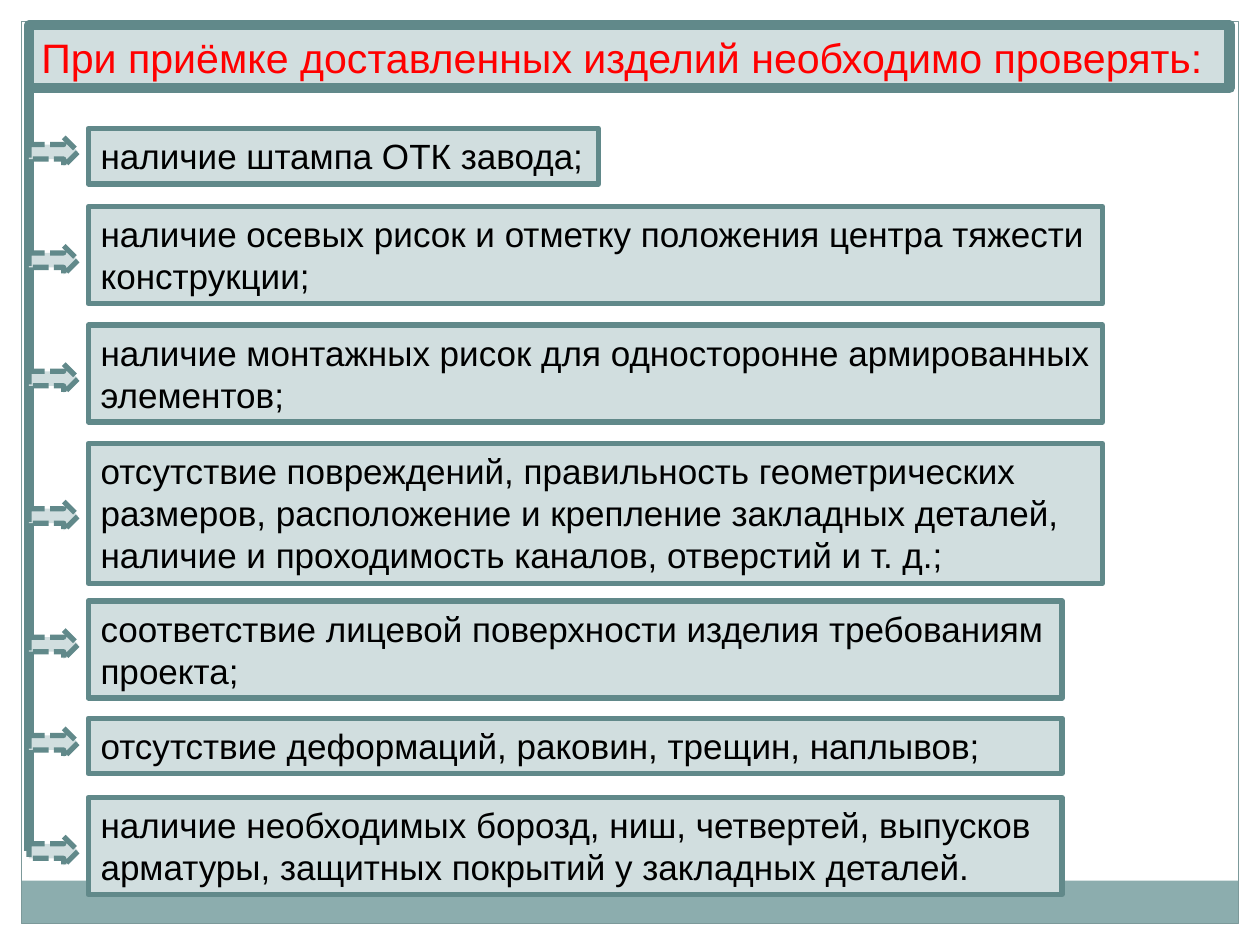
from lxml import etree
from pptx import Presentation
from pptx.dml.color import RGBColor
from pptx.enum import dml, shapes, text
from pptx.oxml import ns
from pptx.util import Inches, Pt

WHITE = RGBColor(0xFF, 0xFF, 0xFF)
BLACK = RGBColor(0, 0, 0)
RED = RGBColor(0xFF, 0, 0)
PALE = RGBColor(0xD1, 0xDE, 0xDF)
TEAL = RGBColor(0x61, 0x89, 0x8A)
BAND = RGBColor(0x8C, 0xAD, 0xAE)
FRAME = RGBColor(0x7C, 0x99, 0x9A)

RECT = shapes.MSO_SHAPE.RECTANGLE
ARROW = shapes.MSO_SHAPE.RIGHT_ARROW
RAIL_X, ARROW_W, ARROW_H = 0.23, 0.39, 0.23
ITEM_X, WIDE, MEDIUM = 0.7, 8.05, 7.73

# top, width, height, arrow top, wording
ITEMS = [
    (1.02, 4.05, 0.44, 1.09, "наличие штампа ОТК завода;"),
    (1.64, WIDE, 0.77, 1.95,
     "наличие осевых рисок и отметку положения центра тяжести конструкции;"),
    (2.58, WIDE, 0.77, 2.89,
     "наличие монтажных рисок для односторонне армированных элементов;"),
    (3.52, WIDE, 1.11, 3.98,
     "отсутствие повреждений, правильность геометрических размеров, "
     "расположение и крепление закладных деталей, наличие и проходимость "
     "каналов, отверстий и т. д.;"),
    (4.77, MEDIUM, 0.77, 5.0,
     "соответствие лицевой поверхности изделия требованиям проекта;"),
    (5.7, MEDIUM, 0.44, 5.78,
     "отсутствие деформаций, раковин, трещин, наплывов;"),
    (6.33, MEDIUM, 0.77, 6.64,
     "наличие необходимых борозд, ниш, четвертей, выпусков арматуры, "
     "защитных покрытий у закладных деталей."),
]


def add_box(s, kind, box, fill=None, line=None, width=0.75, dash=None):
    """Add a flat preset shape in the box (left, top, width, height)."""
    sp = s.shapes.add_shape(kind, *map(Inches, box))
    sp.shadow.inherit = False
    if fill is None:
        sp.fill.background()
    else:
        sp.fill.solid()
        sp.fill.fore_color.rgb = fill
    if line is None:
        sp.line.fill.background()
    else:
        sp.line.color.rgb = line
        sp.line.width = Pt(width)
        if dash is not None:
            sp.line.dash_style = dash
    return sp


def write(sp, words, size=20, color=BLACK, anchor=text.MSO_ANCHOR.TOP, wrap=True):
    """Write left-aligned Arial text into a shape."""
    tf = sp.text_frame
    tf.word_wrap = wrap
    tf.auto_size = text.MSO_AUTO_SIZE.SHAPE_TO_FIT_TEXT
    tf.vertical_anchor = anchor
    p = tf.paragraphs[0]
    p.alignment = text.PP_ALIGN.LEFT
    r = p.add_run()
    r.text = words
    r.font.name = "Arial"
    r.font.size = Pt(size)
    r.font.color.rgb = color


def add_frame(s, box, margin=0.17):
    """Draw the white margins, the bottom band and the thin frame."""
    x, y, w, h = box
    add_box(s, RECT, (x, y, w, margin), WHITE)
    for left in (x + w - margin, x):
        add_box(s, RECT, (left, y, margin, h), WHITE)
    inner = w - 2 * margin
    add_box(s, RECT, (x + margin, y + h - margin - 0.34, inner, 0.34), BAND)
    add_box(s, RECT, (x + margin, y + margin, inner, h - 2 * margin), line=FRAME)


def add_title(s, box):
    """Draw the heading bar."""
    sp = add_box(s, RECT, box, PALE, TEAL, 6)
    write(sp, "При приёмке доставленных изделий необходимо проверять:",
          size=23.5, color=RED, anchor=text.MSO_ANCHOR.MIDDLE)


def add_item(s, box, words):
    """Draw one checklist box."""
    sp = add_box(s, RECT, box, PALE, TEAL, 3)
    write(sp, words, wrap=box[2] >= MEDIUM)


def add_rail(s, x, top, bottom):
    """Draw the vertical line that the arrows leave from."""
    ends = map(Inches, (x, top, x, bottom))
    cn = s.shapes.add_connector(shapes.MSO_CONNECTOR.STRAIGHT, *ends)
    cn.line.color.rgb = TEAL
    cn.line.width = Pt(6)
    etree.SubElement(cn._element.spPr, ns.qn("a:effectLst"))


def main():
    """Build the slide and save it."""
    prs = Presentation()
    prs.slide_width, prs.slide_height = Inches(10), Inches(7.5)
    s = prs.slides.add_slide(prs.slide_layouts[6])
    add_frame(s, (0, 0, 10, 7.5))
    add_title(s, (RAIL_X, 0.2, 9.53, 0.5))
    for top, width, height, _, words in ITEMS:
        add_item(s, (ITEM_X, top, width, height), words)
    add_rail(s, RAIL_X, 0.7, ITEMS[-1][3] + ARROW_H / 2)
    for item in ITEMS:
        add_box(s, ARROW, (RAIL_X, item[3], ARROW_W, ARROW_H), PALE, TEAL, 3,
                dml.MSO_LINE.SQUARE_DOT)
    prs.save("out.pptx")


if __name__ == "__main__":
    main()
